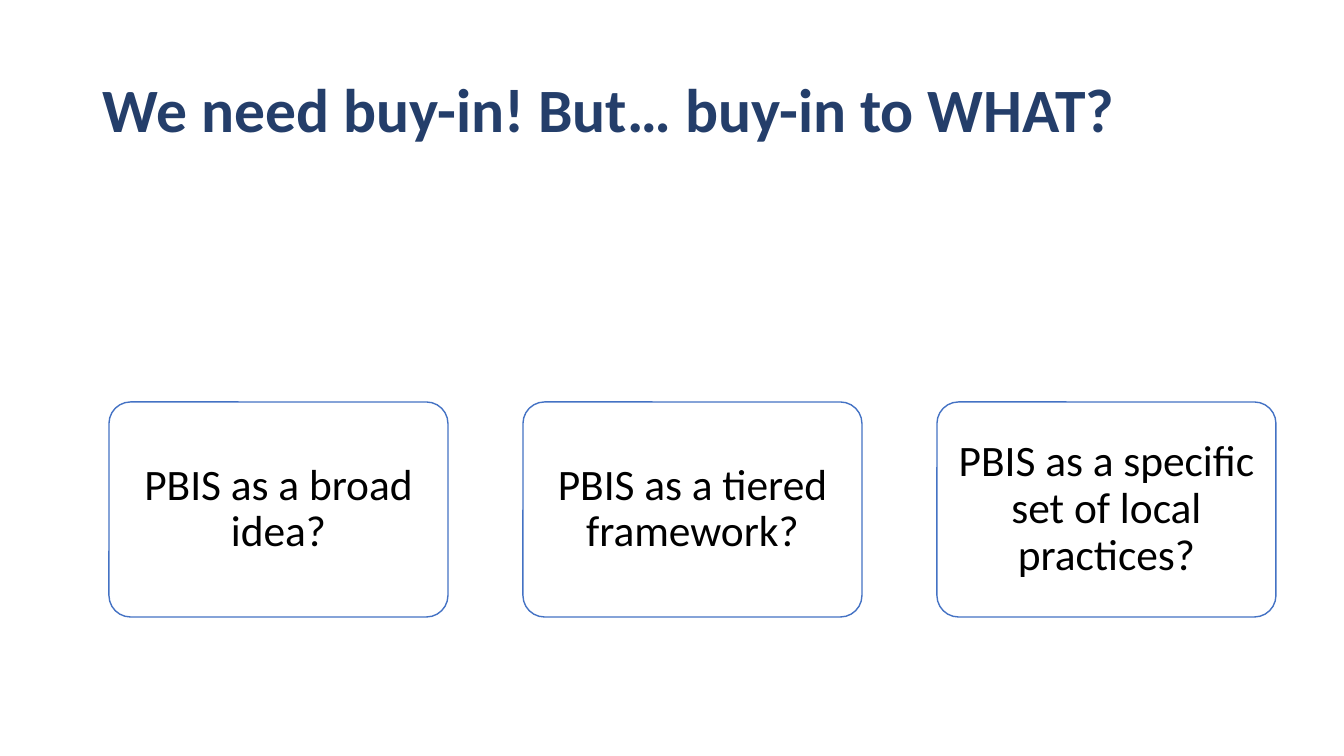
from pptx import Presentation
from pptx.dml.color import RGBColor
from pptx.enum.shapes import MSO_SHAPE
from pptx.enum.text import MSO_ANCHOR, MSO_AUTO_SIZE, PP_ALIGN
from pptx.util import Emu, Pt

EMU_PER_PX = 914400 / 100.8

OPTIONS = [
    "PBIS as a broad idea?",
    "PBIS as a tiered framework?",
    "PBIS as a specific set of local practices?",
]
TITLE_FONT = {"name": "Calibri", "size": Pt(44), "bold": True}
CARD_FONT = {"name": "Calibri", "size": Pt(31), "bold": False}


def px(n):
    return Emu(round(n * EMU_PER_PX))


def color(hex_value):
    return RGBColor.from_string(hex_value)


def set_attrs(obj, values):
    for name, value in values.items():
        setattr(obj, name, value)


def place(sp, x, y, w, h):
    set_attrs(sp, {"left": px(x), "top": px(y), "width": px(w), "height": px(h)})


def write_text(sp, text, font, hex_value, align, margin):
    tf = sp.text_frame
    set_attrs(tf, {"word_wrap": True, "auto_size": MSO_AUTO_SIZE.NONE,
                   "vertical_anchor": MSO_ANCHOR.MIDDLE})
    for side in ("left", "top", "right", "bottom"):
        setattr(tf, f"margin_{side}", px(margin))
    p = tf.paragraphs[0]
    set_attrs(p, {"alignment": align, "line_spacing": 0.9})
    r = p.add_run()
    r.text = text
    set_attrs(r.font, font)
    r.font.color.rgb = color(hex_value)


def add_title(s, text, x, y, w, h):
    sp = s.shapes.title
    place(sp, x, y, w, h)
    write_text(sp, text, TITLE_FONT, "243E6A", PP_ALIGN.LEFT, 10)


def add_card(s, text, x, y, w, h):
    sp = s.shapes.add_shape(MSO_SHAPE.ROUNDED_RECTANGLE, px(x), px(y), px(w), px(h))
    sp.adjustments[0] = 0.1
    sp.shadow.inherit = False
    sp.fill.solid()
    sp.fill.fore_color.rgb = color("FFFFFF")
    sp.line.color.rgb = color("4472C4")
    sp.line.width = Pt(1)
    write_text(sp, text, CARD_FONT, "000000", PP_ALIGN.CENTER, 13)


def add_card_row(s, texts, x, y, w, h, gap):
    card_w = (w - gap * (len(texts) - 1)) / len(texts)
    for i, text in enumerate(texts):
        add_card(s, text, x + i * (card_w + gap), y, card_w, h)


def main():
    prs = Presentation()
    set_attrs(prs, {"slide_width": px(1344), "slide_height": px(756)})
    s = prs.slides.add_slide(prs.slide_layouts[5])

    # Heading
    add_title(s, "We need buy-in! But… buy-in to WHAT?", 93, 40, 1159, 146)

    # Three possible meanings of buy-in
    add_card_row(s, OPTIONS, 109, 402, 1167, 215, 75)

    prs.save("out.pptx")


if __name__ == "__main__":
    main()
